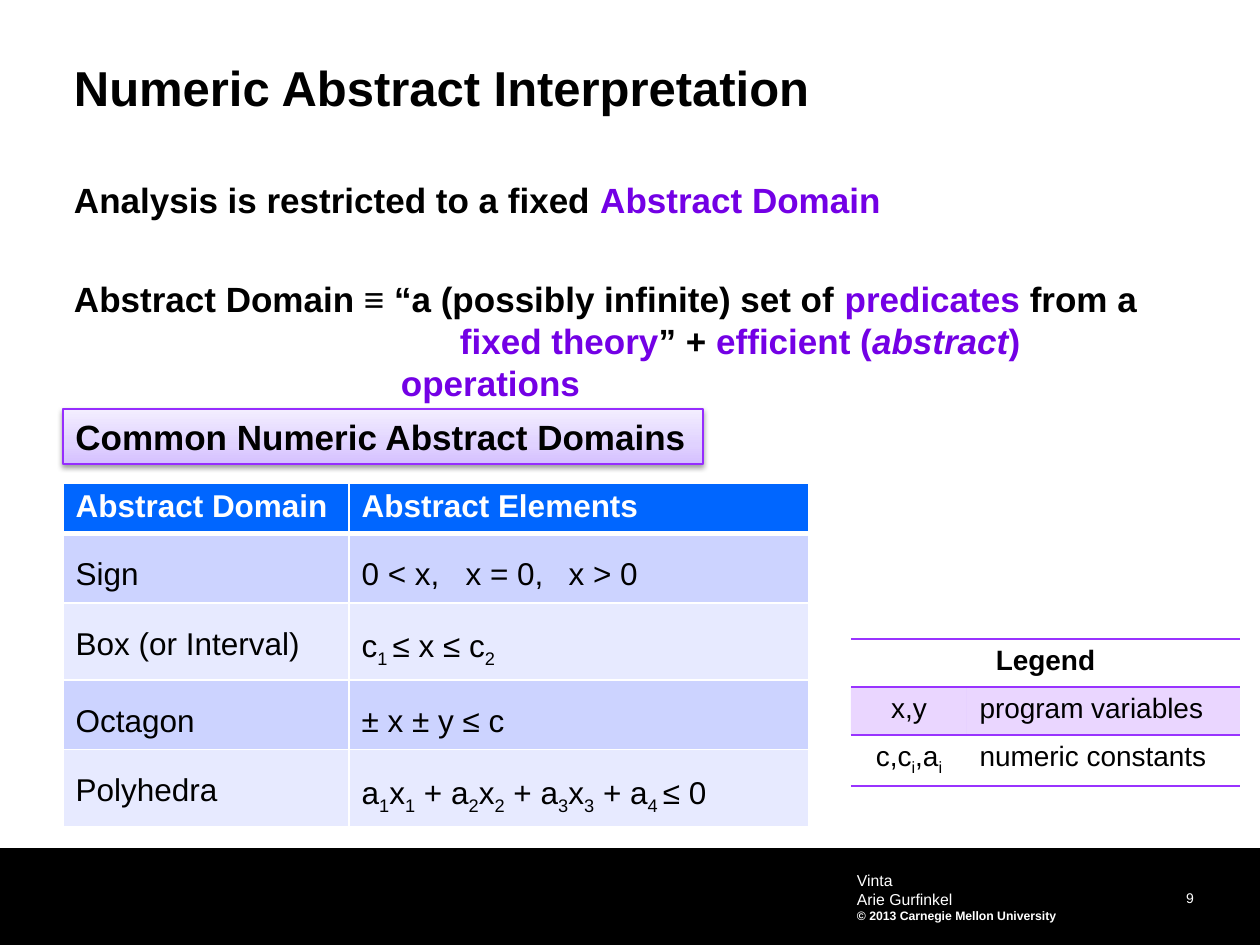
from dataclasses import dataclass
from copy import deepcopy

from lxml import etree
from pptx import Presentation, util as u
from pptx.dml.color import RGBColor
from pptx.enum import shapes, text
from pptx.oxml import parse_xml
from pptx.oxml.ns import nsdecls, qn

SCALE = 914400 / 126
BLACK, WHITE, ACCENT = "000000", "FFFFFF", "7300E5"
BLUE, DARK, LIGHT, VIOLET = "0066FF", "CCD3FF", "E7EAFF", "9933FF"
PLAIN = "{2D5ABB26-0587-4C30-8999-92F81FD0307C}"
LEFT, CENTER, RIGHT = text.PP_ALIGN.LEFT, text.PP_ALIGN.CENTER, text.PP_ALIGN.RIGHT


@dataclass
class Style:
    size: float
    color: str = BLACK
    bold: bool = False
    align: int = LEFT
    space: float = 1.0
    accent: str = ""


@dataclass
class Box:
    left: int
    top: int
    width: int
    height: int


@dataclass
class Row:
    height: int
    cells: tuple
    fill: str
    style: Style


def px(n: int) -> int:
    return u.Emu(round(n * SCALE))


def rgb(code: str) -> RGBColor:
    return RGBColor.from_string(code)


def place(box: Box) -> list:
    return [px(n) for n in (box.left, box.top, box.width, box.height)]


def write(para, words: str, style: Style) -> None:
    """Every second part between bars is accented, or a subscript without accent."""
    para.alignment, para.line_spacing = style.align, style.space
    for i, part in enumerate(words.split("|")):
        if not part:
            continue
        run = para.add_run()
        run.text = part
        font, odd = run.font, i % 2
        font.name, font.size, font.bold = "Arial", u.Pt(style.size), style.bold
        font.color.rgb = rgb(style.accent if odd and style.accent else style.color)
        if odd and not style.accent:
            font._element.set("baseline", "-25000")


def label(slide, box: Box, lines: list, inset: int = 0, anchor=text.MSO_ANCHOR.TOP):
    frame = slide.shapes.add_textbox(*place(box)).text_frame
    frame.word_wrap, frame.vertical_anchor = True, anchor
    frame.margin_left = frame.margin_right = px(inset)
    frame.margin_top = frame.margin_bottom = px(inset)
    for i, (words, style) in enumerate(lines):
        para = frame.add_paragraph() if i else frame.paragraphs[0]
        write(para, words, style)
    return frame


def edge(cell, sides: str, color: str, width: float) -> None:
    """Sides is a run of letters out of L, R, T, B, in that order."""
    props = cell._tc.get_or_add_tcPr()
    for i, side in enumerate(sides):
        props.insert(i, parse_xml(
            f'<a:ln{side} {nsdecls("a")} w="{u.Pt(width)}"><a:solidFill>'
            f'<a:srgbClr val="{color}"/></a:solidFill></a:ln{side}>'))


def grid(slide, box: Box, cols: list, rows: list):
    table = slide.shapes.add_table(len(rows), len(cols), *place(box)).table
    table._tbl.tblPr.find(qn("a:tableStyleId")).text = PLAIN
    for col, width in zip(table.columns, cols):
        col.width = px(width)
    for r, row in enumerate(rows):
        table.rows[r].height = px(row.height)
        for c, words in enumerate(row.cells):
            cell = table.cell(r, c)
            if row.fill:
                cell.fill.solid()
                cell.fill.fore_color.rgb = rgb(row.fill)
            else:
                cell.fill.background()
            write(cell.text_frame.paragraphs[0], words, row.style)
    return table


def panel(slide, box: Box):
    shape = slide.shapes.add_shape(shapes.MSO_SHAPE.RECTANGLE, *place(box))
    shape.shadow.inherit = False
    return shape


def footer(slide) -> None:
    band = panel(slide, Box(0, 848, 1260, 97))
    band.fill.solid()
    band.fill.fore_color.rgb = rgb(BLACK)
    band.line.fill.background()
    label(slide, Box(1079, 886, 115, 23), [("9", Style(8, WHITE, align=RIGHT))],
          anchor=text.MSO_ANCHOR.MIDDLE)
    name = Style(9, WHITE)
    label(slide, Box(851, 864, 315, 66),
          [("Vinta", name), ("Arie Gurfinkel", name),
           ("© 2013 Carnegie Mellon University", Style(7, WHITE, True))],
          6, text.MSO_ANCHOR.MIDDLE)


def body(slide) -> None:
    label(slide, Box(74, 57, 1124, 56),
          [("Numeric Abstract Interpretation", Style(28, bold=True))])
    style = Style(20, bold=True, accent=ACCENT)
    frame = label(slide, Box(74, 179, 1124, 199), [
        ("Analysis is restricted to a fixed |Abstract Domain", style),
        ("Abstract Domain ≡ “a (possibly infinite) set of |predicates| from a", style),
        ("|fixed theory|” + |efficient (||abstract||) operations", style)])
    first, second, third = frame.paragraphs
    second.space_before = u.Pt(32.4)
    third.runs[3].font.italic = True
    props = third._p.get_or_add_pPr()
    props.set("marL", str(px(327)))
    props.set("indent", str(px(59)))


def banner(slide) -> None:
    shape = panel(slide, Box(63, 409, 640, 55))
    shape.fill.gradient()
    shape.fill.gradient_angle = 90
    stops = shape._element.spPr.find(qn("a:gradFill")).find(qn("a:gsLst"))
    stops.insert(1, deepcopy(stops[0]))
    tones = ((0, "D4BFFF"), (0.35, "E0D2FF"), (1, "F3EEFF"))
    for stop, (pos, color) in zip(shape.fill.gradient_stops, tones):
        stop.position, stop.color.rgb = pos, rgb(color)
    shape.line.color.rgb, shape.line.width = rgb("962DFE"), u.Pt(0.75)
    shape._element.spPr.find(qn("a:effectLst")).append(parse_xml(
        f'<a:outerShdw {nsdecls("a")} blurRad="{u.Pt(3.1)}" dist="{u.Pt(1.6)}" '
        'dir="5400000" rotWithShape="0"><a:srgbClr val="000000">'
        '<a:alpha val="38000"/></a:srgbClr></a:outerShdw>'))
    frame = shape.text_frame
    frame.word_wrap = False
    write(frame.paragraphs[0], "Common Numeric Abstract Domains", Style(20, bold=True))


def domains(slide) -> None:
    style = Style(18, space=1.5)
    table = grid(slide, Box(63, 483, 746, 322), [286, 460], [
        Row(46, ("Abstract Domain", "Abstract Elements"), BLUE, Style(18, WHITE, True)),
        Row(66, ("Sign", "0 < x,\tx = 0,\tx > 0"), DARK, style),
        Row(73, ("Box (or Interval)", "c|1 |≤ x ≤ c|2"), LIGHT, style),
        Row(65, ("Octagon", "± x ± y ≤ c"), DARK, style),
        Row(72, ("Polyhedra", "a|1|x|1| + a|2|x|2| + a|3|x|3| + a|4 |≤ 0"),
            LIGHT, style)])
    for cell in table.iter_cells():
        edge(cell, "LRTB", WHITE, 1)
    for c in range(2):
        for r, side in ((0, "a:lnB"), (1, "a:lnT")):
            table.cell(r, c)._tc.tcPr.find(qn(side)).set("w", str(u.Pt(3)))
    props = table.cell(1, 1).text_frame.paragraphs[0]._p.get_or_add_pPr()
    tabs = etree.SubElement(props, qn("a:tabLst"))
    for pos in (104, 207):
        etree.SubElement(tabs, qn("a:tab"), pos=str(px(pos)), algn="l")


def legend(slide) -> None:
    style = Style(16)
    table = grid(slide, Box(851, 639, 389, 147), [116, 273], [
        Row(48, ("Legend", ""), "", Style(16, bold=True, align=CENTER)),
        Row(48, ("x,y", "program variables"), VIOLET, style),
        Row(51, ("c,c|i|,a|i", "numeric constants"), "", style)])
    table.cell(0, 0).merge(table.cell(0, 1))
    for c in range(2):
        edge(table.cell(0, c), "TB", VIOLET, 1)
        edge(table.cell(1, c), "T", VIOLET, 1)
        edge(table.cell(2, c), "B", VIOLET, 1)
        tint = table.cell(1, c)._tc.tcPr.find(qn("a:solidFill"))[0]
        etree.SubElement(tint, qn("a:alpha"), val="20000")
    for r in (1, 2):
        table.cell(r, 0).text_frame.paragraphs[0].alignment = CENTER


def main() -> None:
    deck = Presentation()
    deck.slide_width, deck.slide_height = px(1260), px(945)
    slide = deck.slides.add_slide(deck.slide_layouts[6])
    for draw in (footer, body, domains, banner, legend):
        draw(slide)
    deck.save("out.pptx")


if __name__ == "__main__":
    main()
